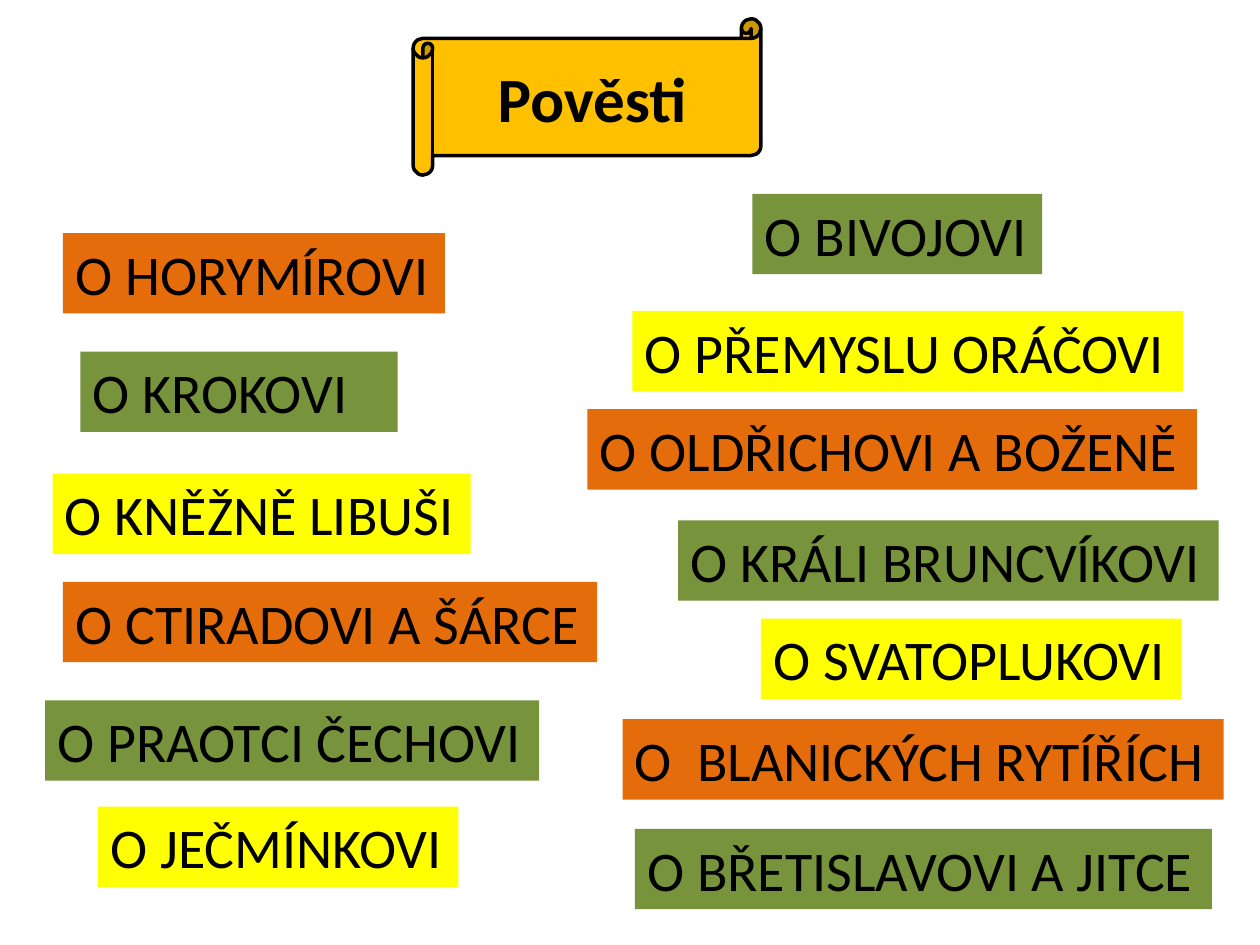
from dataclasses import dataclass
from itertools import cycle, islice

from pptx import Presentation
from pptx import util as u
from pptx.dml import color
from pptx.enum import shapes, text


@dataclass(frozen=True)
class Theme:
    font: str = "Calibri"
    title_size: int = 36
    label_size: int = 32
    ink: str = "000000"
    scroll: str = "FFC000"
    labels: tuple = ("E46C0A", "77933C", "FFFF00")


THEME = Theme()
LABEL_HEIGHT = 1.62

# Each label: wording, left and top within its column, width (cm)
LEFT_LEGENDS = [
    ("O HORYMÍROVI", 0.36, 0, 7.7),
    ("O KROKOVI", 0.71, 2.39, 6.4),
    ("O KNĚŽNĚ LIBUŠI", 0.15, 4.85, 8.43),
    ("O CTIRADOVI A ŠÁRCE", 0.36, 7.03, 10.77),
    ("O PRAOTCI ČECHOVI", 0, 9.42, 9.96),
    ("O JEČMÍNKOVI", 1.07, 11.56, 7.26),
]
RIGHT_LEGENDS = [
    ("O BIVOJOVI", 3.33, 0, 5.84),
    ("O PŘEMYSLU ORÁČOVI", 0.91, 2.36, 11.1),
    ("O OLDŘICHOVI A BOŽENĚ", 0, 4.34, 12.29),
    ("O KRÁLI BRUNCVÍKOVI", 1.83, 6.58, 10.9),
    ("O SVATOPLUKOVI", 3.5, 8.56, 8.48),
    ("O  BLANICKÝCH RYTÍŘÍCH", 0.71, 10.59, 12.12),
    ("O BŘETISLAVOVI A JITCE", 0.96, 12.8, 11.63),
]


def rgb(value):
    return color.RGBColor.from_string(value)


def add_span(para, wording, size, bold=False):
    span = para.add_run()
    span.text = wording
    span.font.name = THEME.font
    span.font.size = u.Pt(size)
    span.font.bold = bold
    span.font.color.rgb = rgb(THEME.ink)


def add_title_scroll(page, left, top, width, height):
    """Scroll with the slide title on its flat part."""
    scroll = page.shapes.add_shape(
        shapes.MSO_SHAPE.HORIZONTAL_SCROLL,
        u.Cm(left), u.Cm(top), u.Cm(width), u.Cm(height))
    scroll.shadow.inherit = False
    scroll.fill.solid()
    scroll.fill.fore_color.rgb = rgb(THEME.scroll)
    scroll.line.color.rgb = rgb(THEME.ink)
    scroll.line.width = u.Pt(2)

    # The rolled edges take an eighth of the height, half that on the right
    roll = height / 8
    title = page.shapes.title
    title.left, title.top = u.Cm(left + roll), u.Cm(top + roll)
    title.width, title.height = u.Cm(width - 1.5 * roll), u.Cm(height - 2 * roll)
    frame = title.text_frame
    frame.vertical_anchor = text.MSO_ANCHOR.MIDDLE
    para = frame.paragraphs[0]
    para.alignment = text.PP_ALIGN.CENTER
    add_span(para, "Pověsti", THEME.title_size, bold=True)
    # Bring the title in front of the scroll
    scroll._element.addnext(title._element)


def add_legend_column(page, left, top, legends, first_color):
    """Scattered labels whose fills repeat in a fixed order."""
    fills = islice(cycle(THEME.labels), first_color, None)
    for (wording, x, y, width), fill in zip(legends, fills):
        box = page.shapes.add_textbox(
            u.Cm(left + x), u.Cm(top + y), u.Cm(width), u.Cm(LABEL_HEIGHT))
        box.fill.solid()
        box.fill.fore_color.rgb = rgb(fill)
        frame = box.text_frame
        # Wrapping keeps each label at its given width
        frame.word_wrap = True
        frame.auto_size = text.MSO_AUTO_SIZE.SHAPE_TO_FIT_TEXT
        add_span(frame.paragraphs[0], wording, THEME.label_size)


def main():
    deck = Presentation()
    deck.slide_width, deck.slide_height = u.Cm(25.4), u.Cm(19.05)
    page = deck.slides.add_slide(deck.slide_layouts.get_by_name("Title Only"))
    add_title_scroll(page, 8.33, 0.38, 7.01, 3.15)
    add_legend_column(page, 0.91, 4.7, LEFT_LEGENDS, first_color=0)
    add_legend_column(page, 11.84, 3.91, RIGHT_LEGENDS, first_color=1)
    deck.save("out.pptx")


if __name__ == "__main__":
    main()
